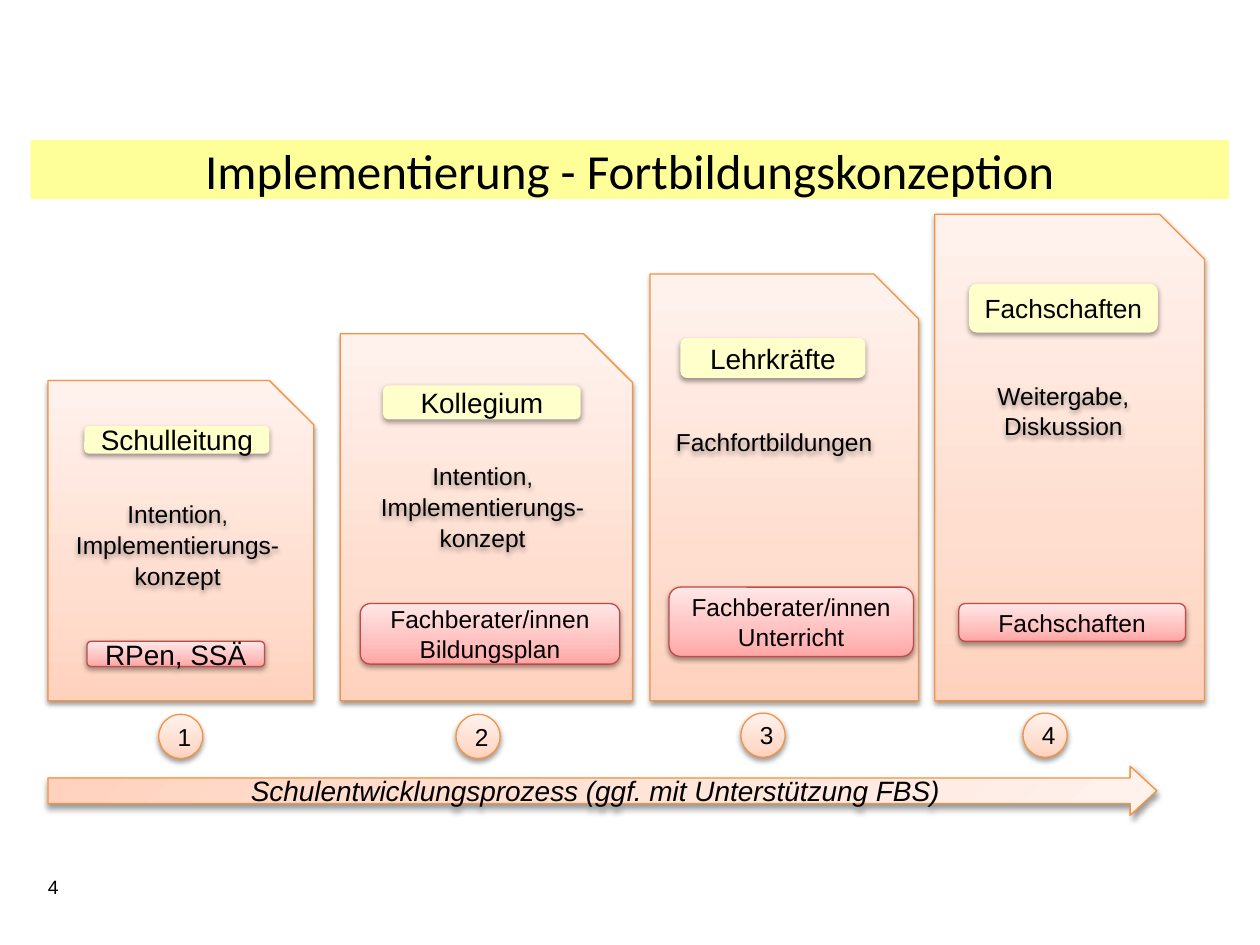
from pptx import Presentation
from pptx import util as u
from pptx.dml.color import RGBColor
from pptx.enum import shapes, text
from pptx.oxml import parse_xml
from pptx.oxml.ns import nsdecls, qn

BLACK = RGBColor(0x00, 0x00, 0x00)
BAND_YELLOW = RGBColor(0xFF, 0xFF, 0x99)
LABEL_YELLOW = RGBColor(0xFF, 0xFF, 0xCC)
ORANGE = RGBColor(0xF6, 0x92, 0x40)
RED = RGBColor(0xBF, 0x4C, 0x48)
PEACH = [RGBColor(0xFF, 0xD2, 0xBD), RGBColor(0xFF, 0xDE, 0xD0), RGBColor(0xFF, 0xF2, 0xED)]
ROSE = [RGBColor(0xFF, 0xA6, 0xA5), RGBColor(0xFF, 0xC0, 0xBF), RGBColor(0xFF, 0xE7, 0xE7)]

UPWARD = '<a:lin ang="16200000" scaled="0"/>'
FROM_CORNER = '<a:path path="circle"><a:fillToRect r="100000" b="100000"/></a:path>'
PRESET = shapes.MSO_SHAPE
PANEL_BOTTOM = 400.5

INTENTION = [[("Intention", 14), (", ", 13), ("Implementierungs-konzept", 14)]]
STEPS = [
    {"panel": (27.4, 217.5, 151.9),
     "label": ("Schulleitung", 16, (48.2, 243.4, 105.8, 15.8)),
     "note": (INTENTION, (27.4, 280.8, 148.3, 38.2)),
     "lead": ("RPen, SSÄ", 16, (49.7, 366.5, 101.5, 14.4)),
     "number": (90.7, 408.2)},
    {"panel": (194.4, 190.8, 167),
     "label": ("Kollegium", 16, (218.9, 220.3, 113, 19.4)),
     "note": (INTENTION, (196.6, 259.2, 158.4, 43.9)),
     "lead": ("Fachberater/innen Bildungsplan", 14, (205.9, 344.9, 148.3, 34.6)),
     "number": (260.6, 408.2)},
    {"panel": (371.5, 156.6, 153.4),
     "label": ("Lehrkräfte", 16, (388.8, 193, 105.8, 23)),
     "note": ([[("Fachfortbildungen", 14)]], (367.9, 239.8, 149, 21.6)),
     "lead": ("Fachberater/innen Unterricht", 14, (382.3, 335.5, 139.7, 39.6)),
     "number": (423.4, 407.5)},
    {"panel": (534.2, 122.4, 154.1),
     "label": ("Fachschaften", 15, (553.7, 162, 108, 28.1)),
     "note": ([[("Weitergabe,", 14)], [("Diskussion", 14)]], (532.1, 213.1, 151.2, 41)),
     "lead": ("Fachschaften", 14, (547.9, 344.9, 129.6, 21.6)),
     "number": (584.6, 407.5)},
]


def points(box):
    return [u.Pt(length) for length in box]


class Deck:
    """Holds the text style and the current slide."""

    def __init__(self):
        self.presentation = Presentation()
        self.presentation.slide_width = u.Pt(720)
        self.presentation.slide_height = u.Pt(540)
        self.font = {"name": "Arial", "italic": False}
        self.slide = self.presentation.slides.add_slide(self.presentation.slide_layouts[5])

    def set_text(self, frame, paragraphs, align=text.PP_ALIGN.CENTER, spacing=None, **changes):
        """Fill a frame with paragraphs, each a list of (wording, size) runs."""
        frame.word_wrap = True
        for index, runs in enumerate(paragraphs):
            paragraph = frame.add_paragraph() if index else frame.paragraphs[0]
            paragraph.alignment = align
            paragraph.line_spacing = spacing
            for wording, size in runs:
                run = paragraph.add_run()
                run.text = wording
                for name, value in {**self.font, "size": u.Pt(size), **changes}.items():
                    setattr(run.font, name, value)
                run.font.color.rgb = BLACK

    def drop_shadow(self, shape):
        shape.shadow.inherit = False
        shape._element.spPr.find(qn("a:effectLst")).append(parse_xml(
            f'<a:outerShdw {nsdecls("a")} blurRad="{u.Pt(3.1)}" dist="{u.Pt(1.6)}" '
            'dir="5400000" rotWithShape="0"><a:srgbClr val="000000">'
            '<a:alpha val="38000"/></a:srgbClr></a:outerShdw>'))

    def shade(self, shape, colors, direction):
        """Replace the fill with a three-stop gradient."""
        shape.fill.background()
        stops = "".join(f'<a:gs pos="{position}"><a:srgbClr val="{color}"/></a:gs>'
                        for position, color in zip((0, 35000, 100000), colors))
        properties = shape._element.spPr
        properties.replace(properties.find(qn("a:noFill")), parse_xml(
            f'<a:gradFill {nsdecls("a")} rotWithShape="1"><a:gsLst>{stops}</a:gsLst>'
            f'{direction}</a:gradFill>'))

    def title(self, wording, box):
        heading = self.slide.shapes.title
        heading.left, heading.top, heading.width, heading.height = points(box)
        heading.fill.solid()
        heading.fill.fore_color.rgb = BAND_YELLOW
        heading.text_frame.vertical_anchor = text.MSO_ANCHOR.MIDDLE
        self.set_text(heading.text_frame, [[(wording, 28)]], name="Calibri")

    def block(self, parent, preset, box, colors=PEACH, line=ORANGE, direction=UPWARD):
        """Add a shadowed shape with a gradient, or a plain fill without line."""
        shape = parent.add_shape(preset, *points(box))
        if isinstance(colors, list):
            self.shade(shape, colors, direction)
        else:
            shape.fill.solid()
            shape.fill.fore_color.rgb = colors
        if line is None:
            shape.line.fill.background()
        else:
            shape.line.color.rgb = line
            shape.line.width = u.Pt(0.75)
        self.drop_shadow(shape)
        shape.text_frame.vertical_anchor = text.MSO_ANCHOR.MIDDLE
        return shape

    def text_box(self, parent, paragraphs, box, **style):
        note = parent.add_textbox(*points(box))
        self.set_text(note.text_frame, paragraphs, **style)
        note.text_frame.auto_size = text.MSO_AUTO_SIZE.SHAPE_TO_FIT_TEXT
        return note

    def pill(self, parent, wording, size, box, colors, line):
        pill = self.block(parent, PRESET.ROUNDED_RECTANGLE, box, colors, line)
        self.set_text(pill.text_frame, [[(wording, size)]])

    def step(self, panel, label, note, lead):
        parent = self.slide.shapes.add_group_shape().shapes
        left, top, width = panel
        self.block(parent, PRESET.SNIP_1_RECTANGLE, (left, top, width, PANEL_BOTTOM - top))
        self.pill(parent, *lead, ROSE, RED)
        self.pill(parent, *label, LABEL_YELLOW, None)
        self.drop_shadow(self.text_box(parent, *note, spacing=1.05))

    def number(self, value, position):
        circle = self.block(self.slide.shapes, PRESET.OVAL, (*position, 25.2, 25.2))
        self.set_text(circle.text_frame, [[(str(value), 14)]])

    def process_arrow(self, wording, box):
        arrow = self.block(self.slide.shapes, PRESET.RIGHT_ARROW, box, direction=FROM_CORNER)
        arrow.adjustments[0], arrow.adjustments[1] = 0.52, 0.54
        for side in ("left", "top", "right", "bottom"):
            setattr(arrow.text_frame, f"margin_{side}", u.Pt(2.9))
        self.set_text(arrow.text_frame, [[(wording, 16)]], italic=True)


def main():
    deck = Deck()
    deck.title("Implementierung - Fortbildungskonzeption", (17.5, 79.9, 684.7, 33.8))
    deck.process_arrow("Schulentwicklungsprozess (ggf. mit Unterstützung FBS)",
                       (27.4, 437.8, 633.6, 28.1))
    for value, step in enumerate(STEPS, 1):
        deck.step(step["panel"], step["label"], step["note"], step["lead"])
        deck.number(value, step["number"])
    deck.text_box(deck.slide.shapes, [[("4", 11)]], (20.2, 496.8, 39.6, 20.9),
                  align=text.PP_ALIGN.LEFT)
    deck.presentation.save("out.pptx")


if __name__ == "__main__":
    main()
